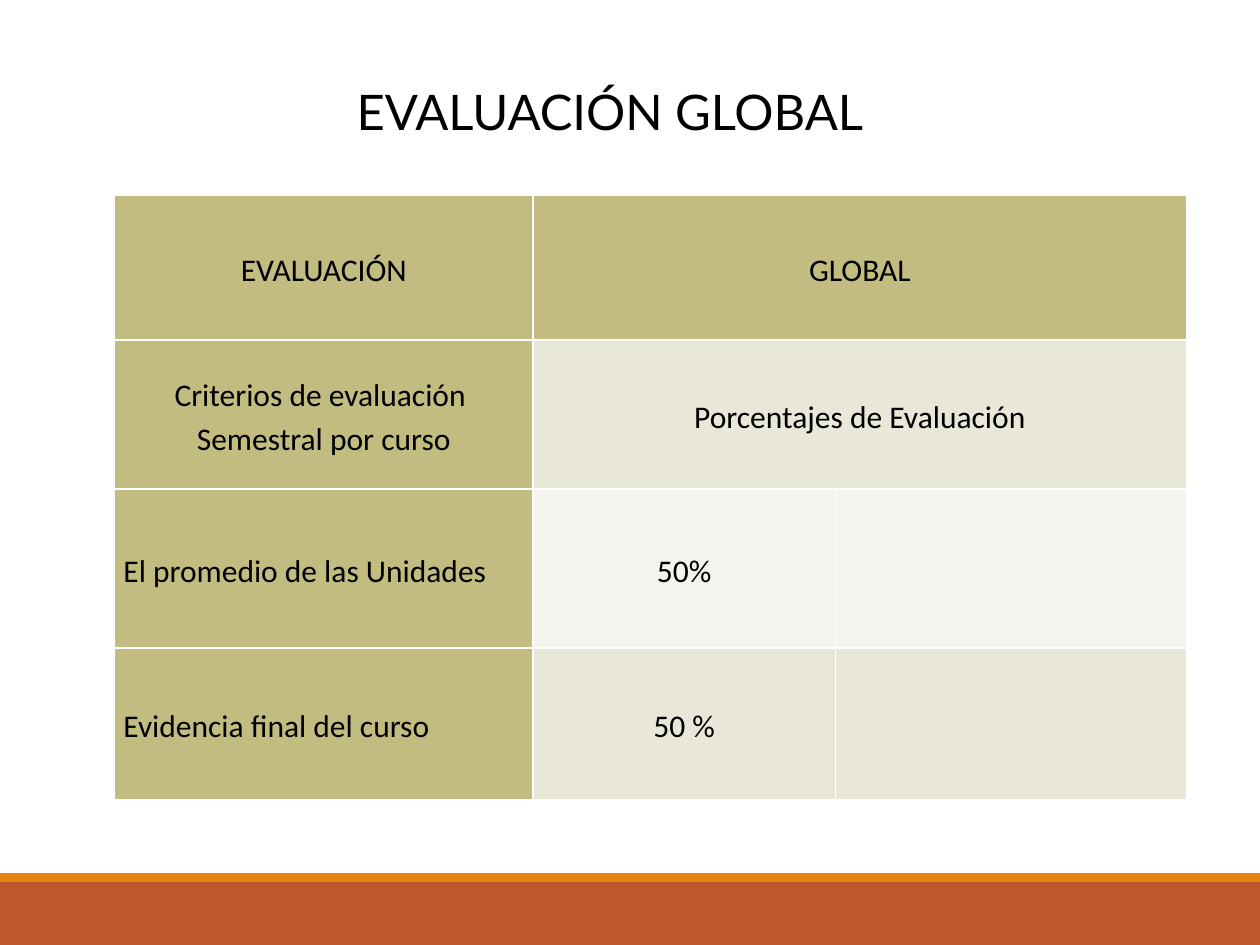
from dataclasses import dataclass
from lxml import etree
from pptx import Presentation
from pptx import util as u
from pptx.dml.color import RGBColor
from pptx.enum import shapes, text
from pptx.oxml import ns

MID = text.PP_ALIGN.CENTER
JUST = text.PP_ALIGN.JUSTIFY


@dataclass(frozen=True)
class Theme:
    ink: str = "000000"
    line: str = "FFFFFF"
    rust: str = "BD582C"
    gold: str = "E48312"
    head: str = "C2BC80"
    dark: str = "E9E7D8"
    light: str = "F4F3ED"
    face: str = "Lato"
    body: str = "Calibri"
    big: int = 28
    mid: int = 18


class Deck:
    """Holds the style and the current slide; lengths are percent of the slide."""

    def __init__(self, theme, wide=10, high=7.5):
        self.theme = theme
        self.prs = Presentation()
        self.prs.slide_width = u.Inches(wide)
        self.prs.slide_height = u.Inches(high)
        self.slide = self.prs.slides.add_slide(self.prs.slide_layouts[6])

    def across(self, share):
        return round(self.prs.slide_width * share / 100)

    def down(self, share):
        return round(self.prs.slide_height * share / 100)

    def box(self, x, y, w, h):
        return self.across(x), self.down(y), self.across(w), self.down(h)

    def paint(self, item, tone):
        item.fill.solid()
        item.fill.fore_color.rgb = RGBColor.from_string(tone)

    def label(self, frame, words, face, size, align):
        frame.text = words
        para = frame.paragraphs[0]
        para.alignment = align
        for run in para.runs:
            run.font.name = face
            run.font.size = u.Pt(size)
            run.font.color.rgb = RGBColor.from_string(self.theme.ink)
        return para

    def band(self, y, h, tone):
        bar = self.slide.shapes.add_shape(
            shapes.MSO_SHAPE.RECTANGLE, *self.box(0, y, 100, h))
        bar.shadow.inherit = False
        self.paint(bar, tone)
        bar.line.fill.background()

    def title(self, words, *place):
        frame = self.slide.shapes.add_textbox(*self.box(*place)).text_frame
        frame.word_wrap = True
        self.label(frame, words, self.theme.face, self.theme.big, MID)

    def edge(self, cell):
        """Draws a thin line on all four sides of a cell."""
        props = cell._tc.get_or_add_tcPr()
        for spot, side in enumerate(("lnL", "lnR", "lnT", "lnB")):
            line = etree.Element(ns.qn("a:" + side), w=str(u.Pt(1)))
            fill = etree.SubElement(line, ns.qn("a:solidFill"))
            etree.SubElement(fill, ns.qn("a:srgbClr"), val=self.theme.line)
            props.insert(spot, line)

    def cell(self, cell, words, tone, align):
        self.paint(cell, tone)
        self.edge(cell)
        cell.margin_left = cell.margin_right = u.Inches(0.07)
        cell.margin_top = cell.margin_bottom = 0
        cell.vertical_anchor = text.MSO_ANCHOR.MIDDLE
        para = self.label(cell.text_frame, words, self.theme.body,
                          self.theme.mid, align)
        para.line_spacing = 1.15

    def table(self, x, y, cols, rows, data, tones, spans):
        place = self.box(x, y, sum(cols), sum(rows))
        grid = self.slide.shapes.add_table(len(rows), len(cols), *place).table
        for col, share in zip(grid.columns, cols):
            col.width = self.across(share)
        for row, share in zip(grid.rows, rows):
            row.height = self.down(share)
        for r, (line, tone) in enumerate(zip(data, tones)):
            for c, words in enumerate(line):
                shade = tone if c else self.theme.head
                align = JUST if c == 0 and r not in spans else MID
                self.cell(grid.cell(r, c), words, shade, align)
        for r in spans:
            grid.cell(r, 1).merge(grid.cell(r, 2))


def main():
    theme = Theme()
    deck = Deck(theme)

    # Footer bands
    deck.band(93.33, 6.67, theme.rust)
    deck.band(92.4, 0.93, theme.gold)

    # Heading
    deck.title("EVALUACIÓN GLOBAL", 16.1, 8, 64.6, 7.6)

    # Grading table
    deck.table(
        9.1, 20.67,
        cols=(33.2, 24, 27.9),
        rows=(15.3, 15.8, 16.8, 16.1),
        data=(
            ("EVALUACIÓN", "GLOBAL", ""),
            ("Criterios de evaluación  Semestral por curso",
             "Porcentajes de Evaluación", ""),
            ("El promedio de las Unidades", "50%", ""),
            ("Evidencia final del curso", "50 %", ""),
        ),
        tones=(theme.head, theme.dark, theme.light, theme.dark),
        spans=(0, 1),
    )

    deck.prs.save("out.pptx")


if __name__ == "__main__":
    main()
